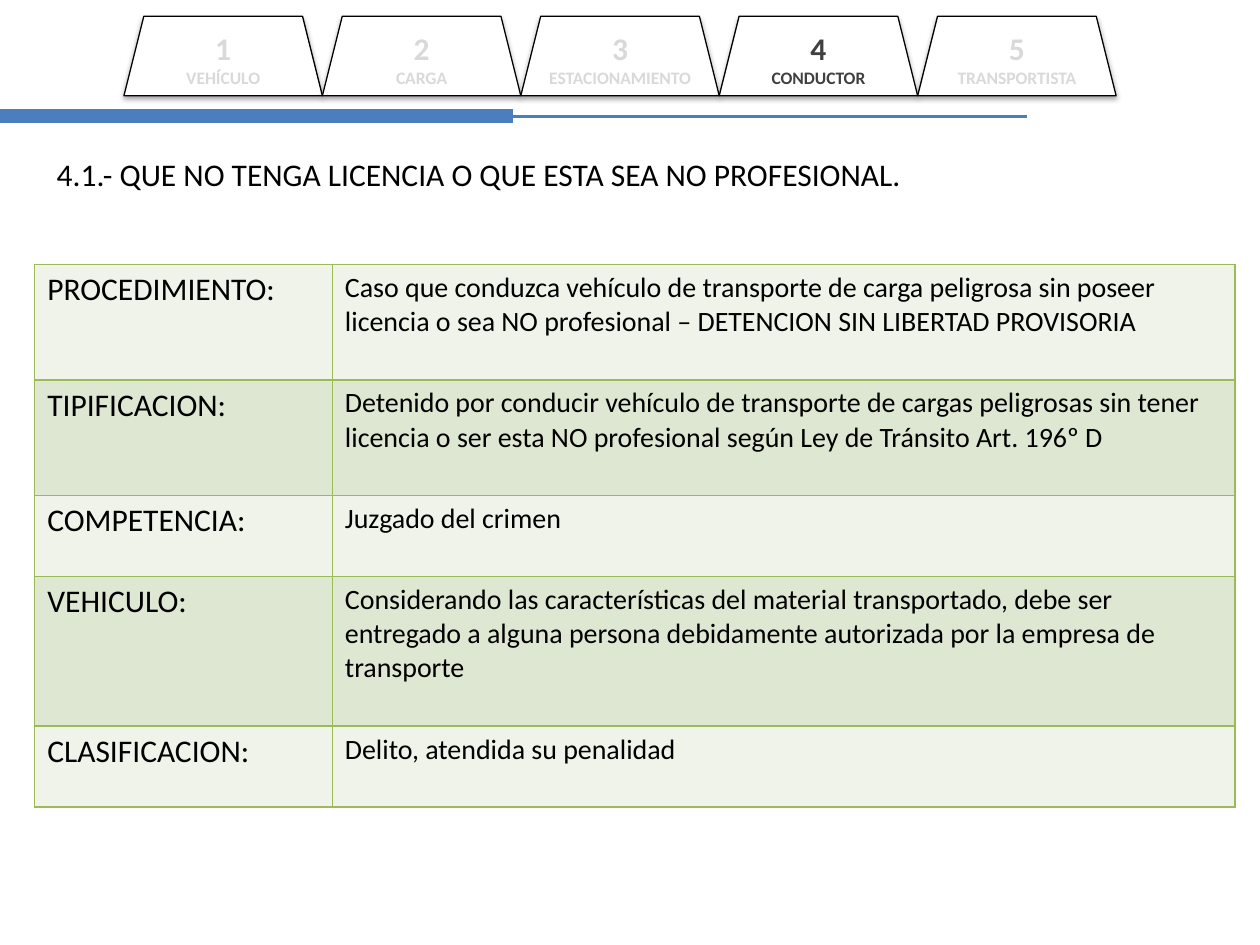
from lxml import etree
from pptx import Presentation
from pptx.dml.color import RGBColor
from pptx.enum.shapes import MSO_CONNECTOR, MSO_SHAPE
from pptx.enum.text import MSO_ANCHOR, PP_ALIGN
from pptx.oxml.ns import qn
from pptx.util import Cm, Pt

TRAPEZOID = MSO_SHAPE.TRAPEZOID
STRAIGHT = MSO_CONNECTOR.STRAIGHT
TOP, MIDDLE = MSO_ANCHOR.TOP, MSO_ANCHOR.MIDDLE
LEFT, CENTER = PP_ALIGN.LEFT, PP_ALIGN.CENTER

BLACK = RGBColor(0x00, 0x00, 0x00)
WHITE = RGBColor(0xFF, 0xFF, 0xFF)
BLUE = RGBColor(0x4B, 0x7E, 0xBC)
GREEN = RGBColor(0x9B, 0xBB, 0x59)
PALE = RGBColor(0xEF, 0xF3, 0xEA)
SAGE = RGBColor(0xDE, 0xE7, 0xD1)
GREY = RGBColor(0xD9, 0xD9, 0xD9)
DARK = RGBColor(0x40, 0x40, 0x40)
FONT = "Calibri"

TITLE = "4.1.- QUE NO TENGA LICENCIA O QUE ESTA SEA NO PROFESIONAL."
TABS = ["VEHÍCULO", "CARGA", "ESTACIONAMIENTO", "CONDUCTOR", "TRANSPORTISTA"]
ACTIVE = 4

# Label, detail and row height in cm
ROWS = [
    ("PROCEDIMIENTO:",
     "Caso que conduzca vehículo de transporte de carga peligrosa sin poseer "
     "licencia o sea NO profesional – DETENCION SIN LIBERTAD PROVISORIA", 2.33),
    ("TIPIFICACION:",
     "Detenido por conducir vehículo de transporte de cargas peligrosas sin tener "
     "licencia o ser esta NO profesional según Ley de Tránsito Art. 196º D", 2.33),
    ("COMPETENCIA:", "Juzgado del crimen", 1.63),
    ("VEHICULO:",
     "Considerando las características del material transportado, debe ser "
     "entregado a alguna persona debidamente autorizada por la empresa de "
     "transporte", 3.02),
    ("CLASIFICACION:", "Delito, atendida su penalidad", 1.63),
]
COLS = (6.0, 18.2)


def style(par, size, color, bold=False, align=LEFT):
    par.alignment = align
    for run in par.runs:
        font = run.font
        font.name, font.size, font.bold = FONT, Pt(size), bold
        font.color.rgb = color


def add_color(parent, color, alpha=None):
    node = etree.SubElement(parent, qn("a:srgbClr"), val=str(color))
    if alpha is not None:
        etree.SubElement(node, qn("a:alpha"), val=str(alpha * 1000))


def add_rule(slide, width, weight):
    y = Cm(2.34)
    rule = slide.shapes.add_connector(STRAIGHT, 0, y, Cm(width), y)
    rule.line.color.rgb = BLUE
    rule.line.width = Pt(weight)
    etree.SubElement(rule._element.spPr, qn("a:effectLst"))


def add_shadow(shape):
    shape.shadow.inherit = False
    effects = shape._element.spPr.find(qn("a:effectLst"))
    outer = etree.SubElement(
        effects, qn("a:outerShdw"), blurRad=str(Pt(3.1)), dist=str(Pt(1.8)),
        dir=str(90 * 60000), rotWithShape="0")
    add_color(outer, BLACK, 35)


def add_title(slide):
    title = slide.shapes.title
    title.left, title.top = Cm(0.89), Cm(3.12)
    title.width, title.height = Cm(19.8), Cm(2.2)
    frame = title.text_frame
    frame.text = TITLE
    frame.word_wrap = True
    frame.vertical_anchor = TOP
    frame.margin_top = 0
    style(frame.paragraphs[0], 18, BLACK)


def add_tab(slide, num, name):
    width = 4.0
    tab = slide.shapes.add_shape(
        TRAPEZOID, Cm(2.5 + (num - 1) * width), Cm(0.33), Cm(width), Cm(1.6))
    tab.fill.solid()
    tab.fill.fore_color.rgb = WHITE
    tab.line.color.rgb = BLACK
    tab.line.width = Pt(0.75)
    add_shadow(tab)
    frame = tab.text_frame
    frame.text = f"{num}\n{name}"
    frame.word_wrap = False
    frame.vertical_anchor = MIDDLE
    frame.margin_top = frame.margin_bottom = 0
    color = DARK if num == ACTIVE else GREY
    for par, size in zip(frame.paragraphs, (18, 10)):
        style(par, size, color, True, CENTER)


def add_border(cell):
    props = cell._tc.get_or_add_tcPr()
    for side in ("lnL", "lnR", "lnT", "lnB"):
        line = etree.SubElement(props, qn(f"a:{side}"), w=str(Pt(1)))
        add_color(etree.SubElement(line, qn("a:solidFill")), GREEN)


def add_grid(slide):
    high = sum(row[2] for row in ROWS)
    grid = slide.shapes.add_table(
        len(ROWS), len(COLS), Cm(0.7), Cm(5.33), Cm(sum(COLS)), Cm(high)).table
    grid.first_row = False
    for col, width in zip(grid.columns, COLS):
        col.width = Cm(width)
    for i, (label, detail, height) in enumerate(ROWS):
        grid.rows[i].height = Cm(height)
        for j, (text, size) in enumerate(((label, 18), (detail, 16))):
            cell = grid.cell(i, j)
            cell.text_frame.text = text
            style(cell.text_frame.paragraphs[0], size, BLACK)
            add_border(cell)
            cell.fill.solid()
            cell.fill.fore_color.rgb = SAGE if i % 2 else PALE


def main():
    deck = Presentation()
    deck.slide_width, deck.slide_height = Cm(25.4), Cm(19.05)
    slide = deck.slides.add_slide(deck.slide_layouts[5])

    # Header rules: thin, then thick on the left half
    add_rule(slide, 20.7, 1.75)
    add_rule(slide, 10.35, 8)

    add_title(slide)

    # Section tabs
    for num, name in enumerate(TABS, 1):
        add_tab(slide, num, name)

    # Offence details
    add_grid(slide)
    deck.save("out.pptx")


if __name__ == "__main__":
    main()
